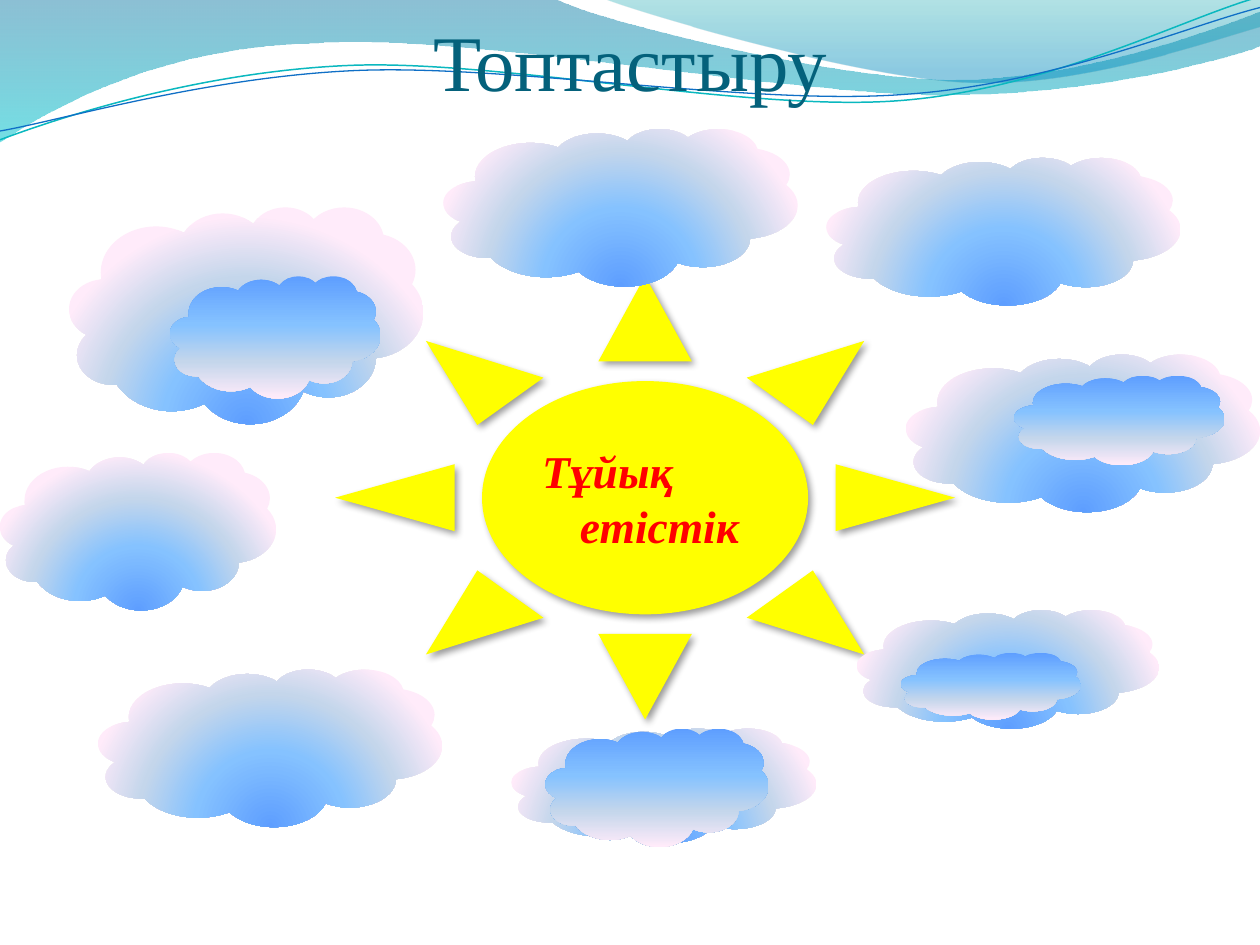
from dataclasses import dataclass
from typing import Optional

from pptx import Presentation
from pptx.dml.color import RGBColor
from pptx.enum.shapes import MSO_SHAPE as SHAPE
from pptx.enum.text import MSO_ANCHOR as ANCHOR, PP_ALIGN as ALIGN
from pptx.oxml import parse_xml
from pptx.oxml.ns import nsdecls, qn
from pptx.util import Inches, Pt

FONT = "Times New Roman"
LINEAR = '<a:lin ang="5400000" scaled="0"/>'
RADIAL = '<a:path path="circle"><a:fillToRect l="50000" t="100000" r="50000" b="0"/></a:path>'


@dataclass
class Stop:
    pos: int
    color: str
    alpha: int = 100


@dataclass
class Wave:
    segments: list[tuple[float, ...]]
    stops: Optional[list[Stop]] = None
    line: str = ""
    weight: float = 0


@dataclass
class Cloud:
    left: float
    top: float
    width: float
    height: float
    shading: str = RADIAL


SKY = [Stop(0, "5E9EFF"), Stop(40, "85C2FF"), Stop(70, "C4D6EB"), Stop(100, "FFEBFA")]

WAVES = [
    Wave([(0, 0), (4.4, -0.01),
          (4.76, 0.17, 6.64, 0.63, 7.58, 0.63), (8.53, 0.63, 9.58, 0.26, 10, 0.09),
          (10.01, 0.36),
          (9.83, 0.44, 8.7, 0.76, 7.46, 0.75), (6.22, 0.75, 3.82, 0.28, 2.57, 0.34),
          (1.29, 0.36, 0.46, 0.83, -0.01, 1.13), (0, 0)],
         stops=[Stop(0, "0074A1", 45), Stop(100, "00C6CF", 55)]),
    Wave([(4.79, -0.01),
          (5.09, 0.11, 6.82, 0.62, 7.69, 0.65), (8.56, 0.69, 9.61, 0.32, 10, 0.21),
          (10, 0), (4.79, -0.01)],
         stops=[Stop(0, "00A1A9", 30), Stop(80, "008BBF", 45)]),
    Wave([(0, 1.11), (0.48, 0.93, 1.58, 0.57, 2.77, 0.52),
          (3.95, 0.47, 5.93, 0.89, 7.13, 0.8), (8.33, 0.71, 9.38, 0.15, 9.98, -0.02)],
         line="0AB8BF", weight=0.85),
    Wave([(0, 1.04), (0.47, 0.96, 1.64, 0.61, 2.83, 0.56),
          (4.03, 0.51, 5.97, 0.84, 7.17, 0.75), (8.36, 0.67, 9.41, 0.21, 10, 0.06)],
         line="0F6FC6", weight=0.75),
]

CLOUDS = [
    Cloud(0, 3.59, 2.19, 1.25),
    Cloud(0.78, 5.31, 2.73, 1.25),
    Cloud(3.52, 1.02, 2.81, 1.25),
    Cloud(4.06, 5.78, 2.42, 0.91),
    Cloud(4.33, 5.78, 1.77, 0.94, LINEAR),
    Cloud(6.8, 4.84, 2.4, 0.94),
    Cloud(7.15, 5.18, 1.43, 0.53, LINEAR),
    Cloud(7.19, 2.81, 2.81, 1.25),
    Cloud(8.05, 2.98, 1.67, 0.71, LINEAR),
    Cloud(6.56, 1.25, 2.81, 1.17),
    Cloud(0.55, 1.64, 2.81, 1.72),
    Cloud(1.35, 2.19, 1.67, 0.97, LINEAR),
]


def rgb(color: str) -> RGBColor:
    return RGBColor.from_string(color)


def fill_gradient(sp, stops: list[Stop], shading: str) -> None:
    marks = "".join(
        f'<a:gs pos="{s.pos * 1000}"><a:srgbClr val="{s.color}">'
        f'<a:alpha val="{s.alpha * 1000}"/></a:srgbClr></a:gs>' for s in stops)
    sp.fill.background()
    fill = sp._element.spPr.find(qn("a:noFill"))
    gradient = parse_xml(f'<a:gradFill {nsdecls("a")} rotWithShape="1">'
                         f'<a:gsLst>{marks}</a:gsLst>{shading}</a:gradFill>')
    fill.getparent().replace(fill, gradient)


def bend(sp, segments: list[tuple[float, ...]]) -> None:
    lines = iter(list(sp._element.iter(qn("a:lnTo"))))
    for seg in segments:
        first = next(lines)
        if len(seg) == 2:
            continue
        curve = parse_xml(f'<a:cubicBezTo {nsdecls("a")}/>')
        first.addprevious(curve)
        for line in (first, next(lines), next(lines)):
            curve.append(line[0])
            line.getparent().remove(line)


def draw_wave(s, wave: Wave) -> None:
    points = [(Inches(seg[i]), Inches(seg[i + 1]))
              for seg in wave.segments for i in range(0, len(seg), 2)]
    builder = s.shapes.build_freeform(*points[0])
    builder.add_line_segments(points[1:], close=wave.stops is not None)
    sp = builder.convert_to_shape()
    bend(sp, wave.segments[1:])
    sp.shadow.inherit = False
    if wave.stops:
        fill_gradient(sp, wave.stops, LINEAR)
        sp.line.fill.background()
    else:
        sp.fill.background()
        sp.line.color.rgb = rgb(wave.line)
        sp.line.width = Pt(wave.weight)


def draw_cloud(s, cloud: Cloud) -> None:
    sp = s.shapes.add_shape(SHAPE.CLOUD, Inches(cloud.left), Inches(cloud.top),
                            Inches(cloud.width), Inches(cloud.height))
    sp.shadow.inherit = False
    fill_gradient(sp, SKY, cloud.shading)
    sp.line.fill.background()


def write(sp, text: str, size: float, color: str, anchor, align, bold=False):
    tf = sp.text_frame
    tf.word_wrap = True
    tf.vertical_anchor = anchor
    p = tf.paragraphs[0]
    p.text = text
    p.alignment = align
    p.font.name = FONT
    p.font.size = Pt(size)
    p.font.bold = p.font.italic = bold
    p.font.color.rgb = rgb(color)
    return p


def draw_title(s) -> None:
    sp = s.shapes.add_textbox(Inches(2.89), Inches(0.16), Inches(4.22), Inches(0.69))
    tf = sp.text_frame
    tf.margin_left = tf.margin_right = tf.margin_bottom = 0
    write(sp, "Топтастыру", 45, "04617B", ANCHOR.BOTTOM, ALIGN.CENTER)


def draw_sun(s) -> None:
    sp = s.shapes.add_shape(SHAPE.SUN, Inches(2.66), Inches(2.19), Inches(4.92), Inches(3.52))
    sp.adjustments[0] = 0.237
    sp.fill.solid()
    sp.fill.fore_color.rgb = rgb("FFFF00")
    sp.line.fill.background()
    sp.shadow.inherit = False
    sp._element.spPr.find(qn("a:effectLst")).append(parse_xml(
        f'<a:outerShdw {nsdecls("a")} blurRad="{Pt(4)}" dist="{Pt(3)}" dir="2700000">'
        '<a:srgbClr val="000000"><a:alpha val="40000"/></a:srgbClr></a:outerShdw>'))
    p = write(sp, "Тұйық етістік", 26, "FF0000", ANCHOR.MIDDLE, ALIGN.LEFT, bold=True)
    pPr = p._p.get_or_add_pPr()
    pPr.set("marL", str(Inches(0.3)))
    pPr.set("indent", str(Inches(-0.3)))


def main() -> None:
    prs = Presentation()
    prs.slide_width, prs.slide_height = Inches(10), Inches(7.5)
    s = prs.slides.add_slide(prs.slide_layouts[6])
    for wave in WAVES:
        draw_wave(s, wave)
    draw_title(s)
    draw_sun(s)
    for cloud in CLOUDS:
        draw_cloud(s, cloud)
    prs.save("out.pptx")


if __name__ == "__main__":
    main()
